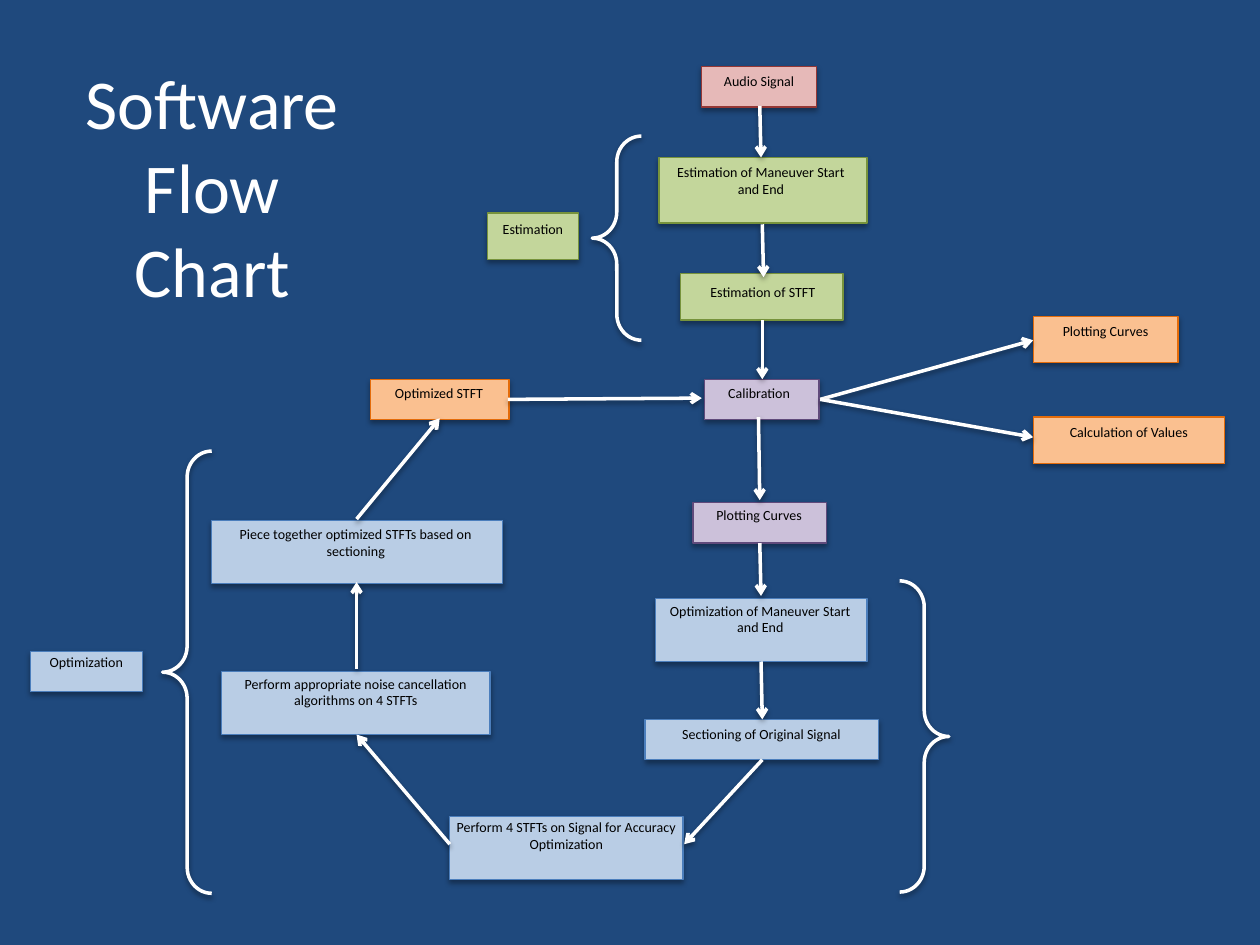
from pptx import Presentation
from pptx.dml.color import RGBColor
from pptx.enum.shapes import MSO_CONNECTOR, MSO_SHAPE
from pptx.enum.text import MSO_AUTO_SIZE, PP_ALIGN
from pptx.oxml import parse_xml
from pptx.oxml.ns import nsdecls, qn
from pptx.util import Inches, Pt

PROCESS = MSO_SHAPE.FLOWCHART_PROCESS
BRACE = MSO_SHAPE.LEFT_BRACE
STRAIGHT = MSO_CONNECTOR.STRAIGHT
CENTER = PP_ALIGN.CENTER
GROW = MSO_AUTO_SIZE.SHAPE_TO_FIT_TEXT

COLORS = {
    "background": "1F497D", "white": "FFFFFF", "black": "000000",
    "red": "E6B9B8", "red line": "953735",
    "green": "C3D69B", "green line": "77933C",
    "purple": "CCC1DA", "purple line": "604A7B",
    "blue": "B9CDE5", "blue line": "4B7EBC",
    "orange": "FAC090", "orange line": "E46C0A",
}

presentation = Presentation()
presentation.slide_width, presentation.slide_height = Inches(10), Inches(7.5)
COLUMN = presentation.slide_width / 100
ROW = presentation.slide_height / 75
slide = presentation.slides.add_slide(presentation.slide_layouts[6])
slide.background.fill.solid()
slide.background.fill.fore_color.rgb = RGBColor.from_string(COLORS["background"])


def style_outline(shape, color, width, distance, opacity):
    """Set the line and the soft shadow that falls straight down."""
    shape.line.color.rgb = RGBColor.from_string(COLORS[color])
    shape.line.width = Pt(width)
    shape._element.spPr.append(parse_xml(
        f'<a:effectLst {nsdecls("a")}><a:outerShdw blurRad="{Pt(3.1)}" '
        f'dist="{Pt(distance)}" dir="5400000" rotWithShape="0">'
        f'<a:srgbClr val="{COLORS["black"]}"><a:alpha val="{opacity * 1000}"/>'
        '</a:srgbClr></a:outerShdw></a:effectLst>'))


def add_text(text, left, top, width, height, size, color):
    text_box = slide.shapes.add_textbox(
        int(left * COLUMN), int(top * ROW), int(width * COLUMN), int(height * ROW))
    frame = text_box.text_frame
    frame.word_wrap = True
    frame.auto_size = GROW
    frame.text = text
    paragraph = frame.paragraphs[0]
    paragraph.alignment = CENTER
    font = paragraph.runs[0].font
    font.name, font.size = "Calibri", Pt(size)
    font.color.rgb = RGBColor.from_string(COLORS[color])
    return frame


# Text, colour, box (left, top, width, height), label (left, top, width)
steps = [
    ("Audio Signal", "red", (55.7, 5.3, 9.1, 3.2), (55.7, 5.3, 9.1)),
    ("Estimation of Maneuver Start and End", "green",
     (52.3, 12.5, 16.5, 5.2), (53.2, 12.5, 14.4)),
    ("Plotting Curves", "purple", (55, 39.9, 10.6, 3.2), (55.7, 39.7, 9.1)),
    ("Calibration", "purple", (55.9, 30.1, 9.1, 3.2), (55.7, 30, 9.1)),
    ("Estimation of STFT", "green", (54, 21.7, 12.9, 3.7), (54.8, 22, 11.5)),
    ("Optimization of Maneuver Start and End", "blue",
     (52, 47.5, 16.8, 5), (52.7, 47.3, 15.3)),
    ("Sectioning of Original Signal", "blue",
     (51.2, 57.1, 18.5, 3.2), (51.2, 57.1, 18.5)),
    ("Perform 4 STFTs on Signal for Accuracy Optimization", "blue",
     (35.7, 64.8, 18.5, 5), (35.7, 64.5, 18.5)),
    ("Perform appropriate noise cancellation algorithms on 4 STFTs", "blue",
     (17.6, 53.3, 21.3, 5), (17.6, 53.1, 21.3)),
    ("Piece together optimized STFTs based on sectioning", "blue",
     (16.8, 41.3, 23.1, 5), (17.6, 41.2, 21.3)),
    ("Optimized STFT", "orange", (29.4, 30.1, 11, 3.2), (30.3, 30, 9.1)),
    ("Plotting Curves", "orange", (82, 25.1, 11.5, 3.7), (82, 25.1, 11.5)),
    ("Calculation of Values", "orange", (82, 33.1, 15.2, 3.7), (82, 33.1, 15.2)),
    ("Estimation", "green", (38.7, 16.9, 7.2, 3.7), (38.7, 17, 7.2)),
    ("Optimization", "blue", (2.4, 51.7, 8.9, 3.2), (2.4, 51.4, 8.9)),
]
for text, color, (left, top, width, height), label in steps:
    box = slide.shapes.add_shape(
        PROCESS, int(left * COLUMN), int(top * ROW), int(width * COLUMN), int(height * ROW))
    box.fill.solid()
    box.fill.fore_color.rgb = RGBColor.from_string(COLORS[color])
    style_outline(box, f"{color} line", 0.75, 1.8, 35)
    label_height = 3.7 if height >= 5 else 2.4  # tall boxes hold two lines
    frame = add_text(text, *label, label_height, 8, "black")
    frame.margin_left = frame.margin_right = 0

# Arrows: start column and row, end column and row
arrows = [
    (60.3, 8.4, 60.4, 12.5), (60.5, 17.8, 60.6, 22), (60.5, 25.4, 60.5, 30.1),
    (60.2, 33.1, 60.3, 39.7), (60.3, 43.1, 60.4, 47.3), (60.4, 52.5, 60.5, 57.1),
    (60.5, 60.3, 54.3, 67), (35.7, 67, 28.3, 58.3), (28.3, 53.1, 28.3, 46.2),
    (28.3, 41.2, 34.9, 33.2), (40.3, 31.7, 55.7, 31.6),
    (65.1, 31.7, 82, 27), (65.1, 31.7, 82, 34.7),
]
for start_x, start_y, end_x, end_y in arrows:
    arrow = slide.shapes.add_connector(
        STRAIGHT, int(start_x * COLUMN), int(start_y * ROW),
        int(end_x * COLUMN), int(end_y * ROW))
    style_outline(arrow, "white", 2, 1.6, 38)
    arrow._element.spPr.find(qn("a:ln")).append(
        parse_xml(f'<a:tailEnd {nsdecls("a")} type="arrow"/>'))

# Braces: left, top, height, rotation
for left, top, height, rotation in [
        (47, 10.8, 16.2, 0), (12.9, 35.8, 35.1, 0), (71.4, 46.1, 24.7, 180)]:
    brace = slide.shapes.add_shape(
        BRACE, int(left * COLUMN), int(top * ROW), int(3.9 * COLUMN), int(height * ROW))
    brace.adjustments[0] = 0.53
    brace.rotation = rotation
    brace.fill.background()
    style_outline(brace, "white", 2, 1.6, 38)

add_text("Software Flow Chart", 4.6, 4.2, 24.5, 21.2, 40, "white")

presentation.save("out.pptx")
